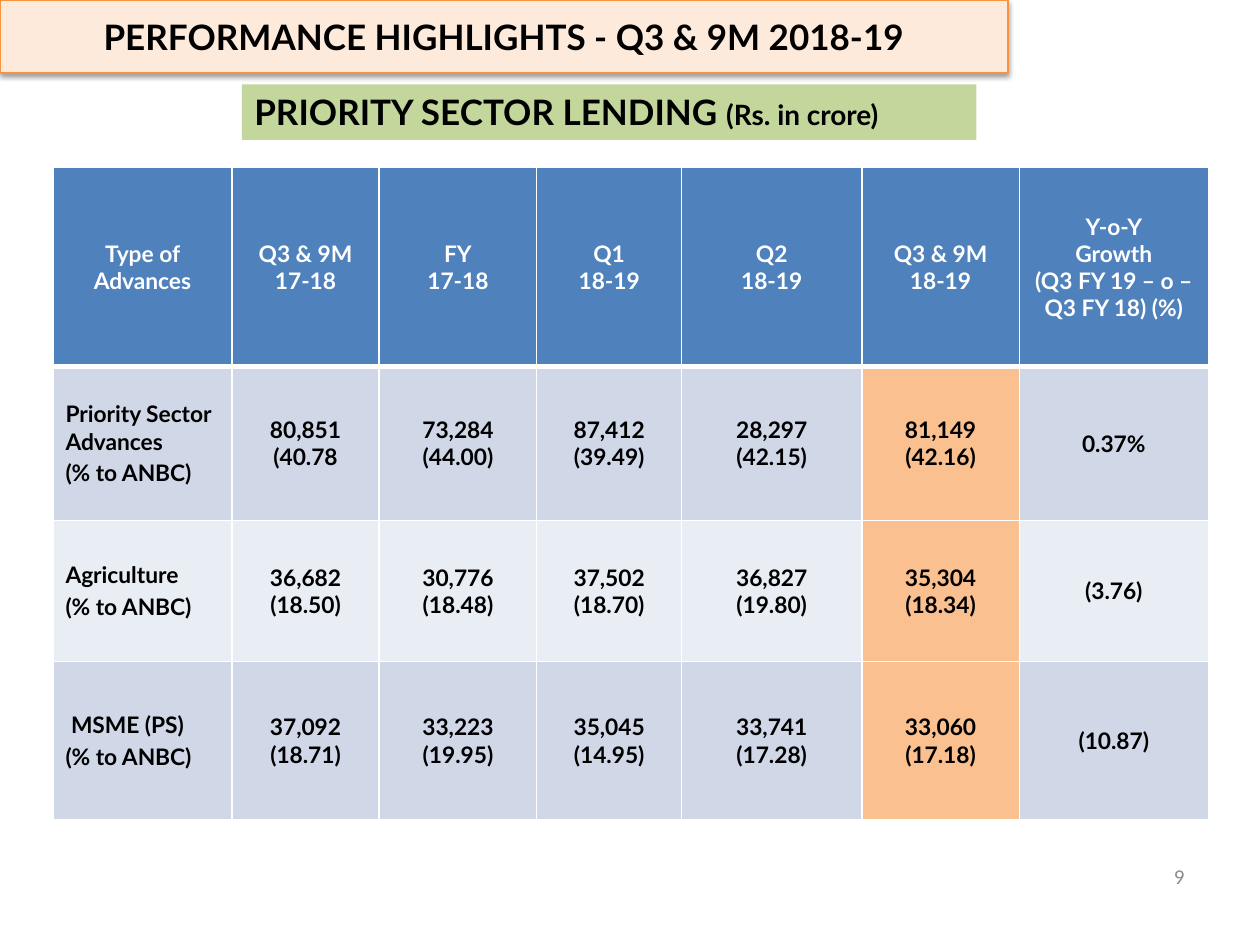
from lxml.etree import SubElement
from pptx import Presentation
from pptx.dml.color import RGBColor
from pptx.enum.shapes import MSO_SHAPE
from pptx.enum.text import MSO_ANCHOR, PP_ALIGN
from pptx.oxml.ns import qn
from pptx.util import Inches, Pt

BLACK = RGBColor(0x00, 0x00, 0x00)
WHITE = RGBColor(0xFF, 0xFF, 0xFF)
GREY = RGBColor(0x8C, 0x8C, 0x8C)
CREAM = RGBColor(0xFD, 0xEA, 0xDA)
ORANGE = RGBColor(0xF6, 0x92, 0x40)
GREEN = RGBColor(0xC3, 0xD6, 0x9B)
BLUE = RGBColor(0x4F, 0x81, 0xBD)
BANDS = (RGBColor(0xD0, 0xD8, 0xE8), RGBColor(0xE9, 0xED, 0xF4))
PEACH = RGBColor(0xFA, 0xC0, 0x90)

COLUMN_WIDTHS = (1.42, 1.17, 1.25, 1.15, 1.43, 1.25, 1.5)
ROW_HEIGHTS = (1.58, 1.22, 1.12, 1.26)
CURRENT_QUARTER = 5
ADVANCES = (
    ("Type of Advances", "Q3 & 9M\n17-18", "FY\n17-18", "Q1\n18-19", "Q2\n18-19",
     "Q3 & 9M\n18-19", "Y-o-Y\nGrowth\n(Q3 FY 19 – o – Q3 FY 18) (%)"),
    ("Priority Sector Advances\n(% to ANBC)", "80,851\n(40.78", "73,284\n(44.00)",
     "87,412\n(39.49)", "28,297\n(42.15)", "81,149\n(42.16)", "0.37%"),
    ("Agriculture\n(% to ANBC)", "36,682\n(18.50)", "30,776\n(18.48)",
     "37,502\n(18.70)", "36,827\n(19.80)", "35,304\n(18.34)", "(3.76)"),
    (" MSME (PS)\n(% to ANBC)", "37,092\n(18.71)", "33,223\n(19.95)",
     "35,045\n(14.95)", "33,741\n(17.28)", "33,060\n(17.18)", "(10.87)"),
)


def style_font(font, size, color=BLACK, bold=True, name="Lato"):
    """Set the face, size, weight and colour of a font."""
    font.name, font.size, font.bold = name, Pt(size), bold
    font.color.rgb = color


def add_banner(slide, box, fill, anchor, align):
    """Add a flat filled rectangle ready for one line of text."""
    banner = slide.shapes.add_shape(MSO_SHAPE.RECTANGLE, *map(Inches, box))
    banner.shadow.inherit = False
    banner.fill.solid()
    banner.fill.fore_color.rgb = fill
    banner.line.fill.background()
    banner.text_frame.vertical_anchor = anchor
    banner.text_frame.paragraphs[0].alignment = align
    return banner


def add_drop_shadow(shape):
    """Cast a soft black shadow straight down."""
    effects = shape._element.spPr.find(qn("a:effectLst"))
    shadow = SubElement(effects, qn("a:outerShdw"), blurRad=str(Pt(3.1)),
                        dist=str(Pt(1.6)), dir="5400000", rotWithShape="0")
    color = SubElement(shadow, qn("a:srgbClr"), val=str(BLACK))
    SubElement(color, qn("a:alpha"), val="38000")


def add_title(slide):
    """Add the outlined title banner at the top edge."""
    title = add_banner(slide, (0, 0, 8, 0.58), CREAM, MSO_ANCHOR.MIDDLE, PP_ALIGN.CENTER)
    title.line.color.rgb = ORANGE
    title.line.width = Pt(0.75)
    add_drop_shadow(title)
    heading = title.text_frame.paragraphs[0]
    heading.text = "PERFORMANCE HIGHLIGHTS - Q3 & 9M 2018-19"
    style_font(heading.font, 20)


def add_subtitle(slide):
    """Add the section banner with its unit in smaller type."""
    subtitle = add_banner(slide, (1.92, 0.67, 5.83, 0.44), GREEN, MSO_ANCHOR.TOP, PP_ALIGN.LEFT)
    heading = subtitle.text_frame.paragraphs[0]
    for words, size in (("PRIORITY SECTOR LENDING ", 20), ("(Rs. in crore)", 16)):
        run = heading.add_run()
        run.text = words
        style_font(run.font, size)


def add_page_number(slide, number):
    """Add the page number at the lower right."""
    footer = slide.shapes.add_textbox(*map(Inches, (7.17, 6.75, 2.33, 0.4))).text_frame
    footer.word_wrap = True
    footer.vertical_anchor = MSO_ANCHOR.MIDDLE
    page = footer.paragraphs[0]
    page.text = str(number)
    page.alignment = PP_ALIGN.RIGHT
    style_font(page.font, 12, GREY, False, "Calibri")


def set_borders(cell, **widths):
    """Draw white cell edges, each keyed by its border tag."""
    properties = cell._tc.get_or_add_tcPr()
    for position, (edge, width) in enumerate(widths.items()):
        border = properties.makeelement(qn(f"a:{edge}"), {"w": str(Pt(width))})
        fill = SubElement(border, qn("a:solidFill"))
        SubElement(fill, qn("a:srgbClr"), val=str(WHITE))
        properties.insert(position, border)


def cell_fill(row, column):
    """Choose the fill for a place in the table."""
    if row == 0:
        return BLUE
    return PEACH if column == CURRENT_QUARTER else BANDS[(row - 1) % 2]


def fill_cell(cell, text, row, column):
    """Write and format one table cell."""
    cell.text = text
    cell.vertical_anchor = MSO_ANCHOR.MIDDLE
    cell.fill.solid()
    cell.fill.fore_color.rgb = cell_fill(row, column)
    if row == 0:
        set_borders(cell, lnL=1, lnR=1, lnT=1, lnB=3)
    for paragraph in cell.text_frame.paragraphs:
        style_font(paragraph.font, 13, BLACK if row else WHITE)
        paragraph.alignment = PP_ALIGN.LEFT if row and column == 0 else PP_ALIGN.CENTER
        if column == 0:
            paragraph.space_before = Pt(2.6)


def add_advances_table(slide):
    """Add the table of advances by type and period."""
    size = sum(COLUMN_WIDTHS), sum(ROW_HEIGHTS)
    table = slide.shapes.add_table(len(ROW_HEIGHTS), len(COLUMN_WIDTHS),
                                   *map(Inches, (0.42, 1.33, *size))).table
    for column, width in zip(table.columns, COLUMN_WIDTHS):
        column.width = Inches(width)
    for row, height in zip(table.rows, ROW_HEIGHTS):
        row.height = Inches(height)
    for row, texts in enumerate(ADVANCES):
        for column, text in enumerate(texts):
            fill_cell(table.cell(row, column), text, row, column)


def main():
    """Build the slide and save it."""
    deck = Presentation()
    deck.slide_width, deck.slide_height = Inches(10), Inches(7.5)
    slide = deck.slides.add_slide(deck.slide_layouts[6])
    add_subtitle(slide)
    add_page_number(slide, 9)
    add_advances_table(slide)
    add_title(slide)
    deck.save("out.pptx")


if __name__ == "__main__":
    main()
